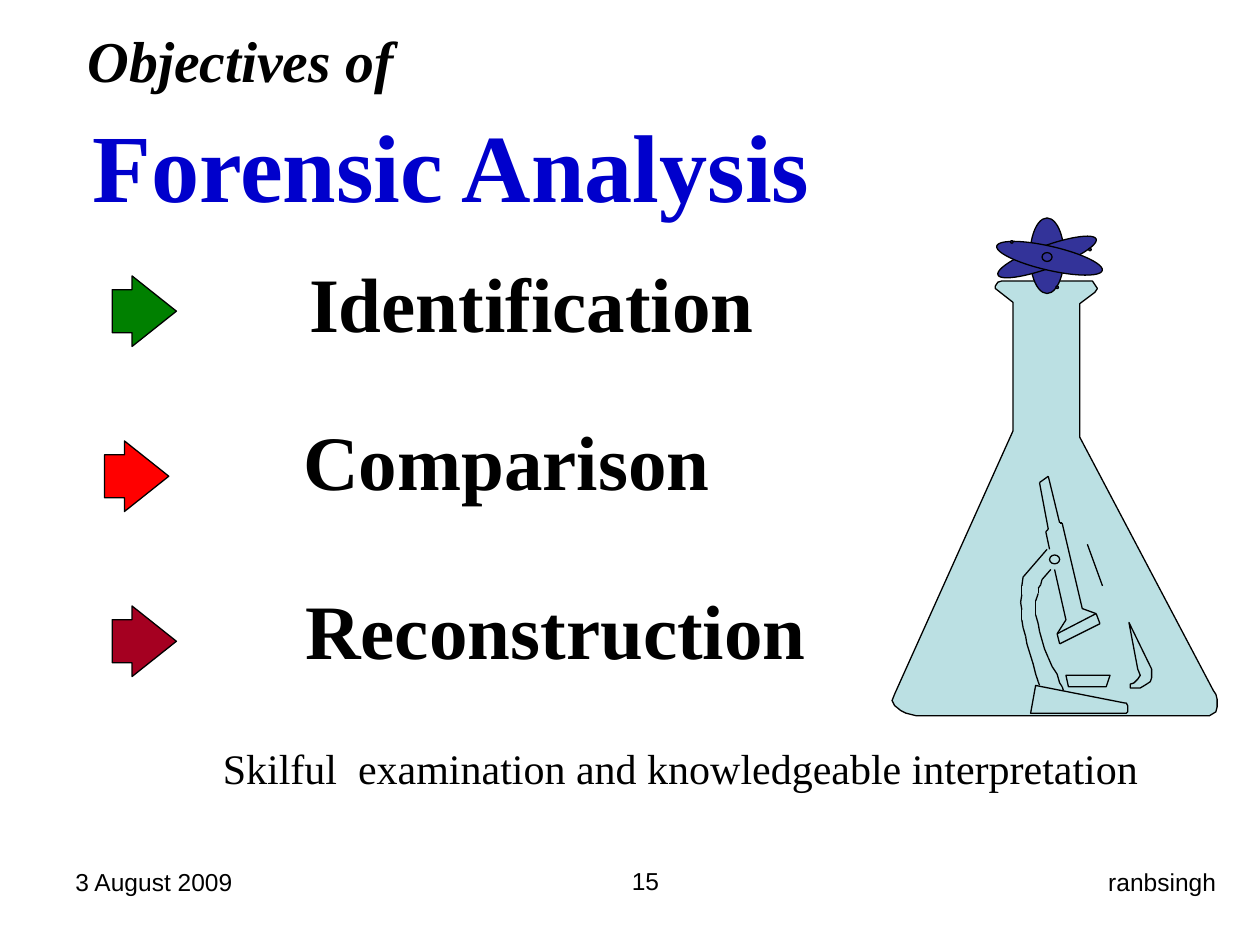
import itertools

import pptx
import pptx.dml.color
import pptx.enum.shapes
import pptx.enum.text
import pptx.oxml
import pptx.util

Inches = pptx.util.Inches
Pt = pptx.util.Pt
SHAPE = pptx.enum.shapes.MSO_SHAPE
ALIGN = pptx.enum.text.PP_ALIGN
LEFT, CENTER, RIGHT = ALIGN.LEFT, ALIGN.CENTER, ALIGN.RIGHT

BLACK, BLUE = "000000", "0000CC"
GLASS, ATOM = "BBE0E3", "333399"
SERIF, SANS = "Times New Roman", "Arial"

FLASK = [
    (8.57, 2.41), (8.57, 3.47), (9.63, 5.48), (9.65, 5.51), (9.66, 5.55),
    (9.66, 5.61), (9.65, 5.65), (9.6, 5.68), (7.27, 5.68), (7.19, 5.66),
    (7.15, 5.64), (7.1, 5.6), (7.08, 5.56), (7.1, 5.51), (8.04, 3.42),
    (8.04, 2.4), (7.9, 2.29), (7.9, 2.27), (7.92, 2.24), (7.95, 2.23),
    (8.67, 2.23), (8.71, 2.29), (8.69, 2.32)]
MIRROR = [
    (8.97, 5.46), (9.05, 5.46), (9.1, 5.43), (9.13, 5.41), (9.14, 5.38),
    (9.14, 5.31), (8.96, 4.94), (9.03, 5.31), (9.05, 5.36), (9.03, 5.39),
    (9, 5.42), (8.97, 5.43)]
BASE = [
    (8.18, 5.66), (8.94, 5.66), (8.95, 5.65), (8.95, 5.6), (8.94, 5.58),
    (8.93, 5.58), (8.22, 5.44)]
STAGE = [(8.46, 5.36), (8.81, 5.36), (8.78, 5.45), (8.48, 5.45)]
OUTER_ARM = [
    (8.31, 4.36), (8.12, 4.58), (8.11, 4.65), (8.11, 4.72), (8.1, 4.78),
    (8.11, 4.84), (8.11, 4.92), (8.12, 4.98), (8.14, 5.05), (8.15, 5.11),
    (8.2, 5.27), (8.22, 5.35), (8.24, 5.41), (8.25, 5.44)]
INNER_ARM = [
    (8.34, 4.52), (8.27, 4.6), (8.26, 4.64), (8.24, 4.67), (8.24, 4.71),
    (8.22, 4.77), (8.22, 4.83), (8.22, 4.88), (8.24, 4.95), (8.25, 5.01),
    (8.27, 5.08), (8.29, 5.15), (8.32, 5.22), (8.35, 5.29), (8.39, 5.35),
    (8.41, 5.42), (8.43, 5.45), (8.44, 5.48)]
EYEPIECE = [
    (8.33, 4.36), (8.3, 4.22), (8.32, 4.2), (8.25, 3.83), (8.32, 3.78),
    (8.41, 4.15), (8.43, 4.15)]
BARREL = [(8.43, 4.15), (8.59, 4.83), (8.7, 4.87)]
OBJECTIVE = [
    (8.7, 4.87), (8.73, 4.95), (8.41, 5.11), (8.39, 5.03), (8.46, 4.92),
    (8.37, 4.52)]


def rgb(color):
    return pptx.dml.color.RGBColor.from_string(color)


def write(tf, text, size=14, font=SANS, color=BLACK, bold=False,
          italic=False, align=LEFT):
    p = tf.paragraphs[0]
    p.alignment = align
    r = p.add_run()
    r.text = text
    r.font.size = Pt(size)
    r.font.name = font
    r.font.color.rgb = rgb(color)
    r.font.bold = bold
    r.font.italic = italic


class Drawing:
    def __init__(self, slide, line_width=0.75):
        self.slide = slide
        self.shapes = slide.shapes
        self.line_width = Pt(line_width)

    def style(self, sp, fill):
        sp.shadow.inherit = False
        if fill:
            sp.fill.solid()
            sp.fill.fore_color.rgb = rgb(fill)
        else:
            sp.fill.background()
        sp.line.color.rgb = rgb(BLACK)
        sp.line.width = self.line_width
        return sp

    def text(self, text, left, top, width, height, wrap=True, **fmt):
        box = self.shapes.add_textbox(
            Inches(left), Inches(top), Inches(width), Inches(height))
        box.text_frame.word_wrap = wrap
        write(box.text_frame, text, **fmt)

    def heading(self, text, center, top, width, height, sp=None, **fmt):
        """Put a centred serif line without insets in sp or a new text box."""
        if sp is None:
            sp = self.shapes.add_textbox(0, 0, 0, 0)
        sp.left, sp.top = Inches(center - width / 2), Inches(top)
        sp.width, sp.height = Inches(width), Inches(height)
        tf = sp.text_frame
        tf.margin_left = tf.margin_right = 0
        tf.margin_top = tf.margin_bottom = 0
        tf.vertical_anchor = pptx.enum.text.MSO_ANCHOR.TOP
        tf.auto_size = pptx.enum.text.MSO_AUTO_SIZE.NONE
        tf.word_wrap = False
        write(tf, text, font=SERIF, bold=True, align=CENTER, **fmt)

    def preset(self, kind, left, top, width, height, fill=None):
        return self.style(self.shapes.add_shape(
            kind, Inches(left), Inches(top), Inches(width), Inches(height)),
            fill)

    def arrow(self, left, top, fill):
        sp = self.preset(SHAPE.RIGHT_ARROW, left, top, 0.51, 0.56, fill)
        sp.adjustments[0] = 0.61
        sp.adjustments[1] = 0.69

    def ellipse(self, x, y, width, height, fill=None, rotation=0):
        """Draw an ellipse around the centre x, y."""
        sp = self.preset(SHAPE.OVAL, x - width / 2, y - height / 2,
                         width, height, fill)
        sp.rotation = rotation

    def outline(self, points, fill=None, close=True):
        start, *rest = [(Inches(x), Inches(y)) for x, y in points]
        builder = self.shapes.build_freeform(*start)
        builder.add_line_segments(rest, close=close)
        self.style(builder.convert_to_shape(), fill)

    def line(self, start, end):
        c = self.shapes.add_connector(
            pptx.enum.shapes.MSO_CONNECTOR.STRAIGHT,
            *[Inches(v) for v in (*start, *end)])
        c.line.color.rgb = rgb(BLACK)
        c.line.width = self.line_width
        c.element.spPr.append(pptx.oxml.parse_xml(
            '<a:effectLst xmlns:a="http://schemas.openxmlformats.org/'
            'drawingml/2006/main"/>'))


def draw_flask(d):
    d.outline(FLASK, GLASS)
    d.outline(MIRROR, GLASS)
    d.line((8.63, 4.32), (8.75, 4.65))


def draw_microscope(d):
    for part in (BASE, STAGE):
        d.outline(part)
    for part in (OUTER_ARM, INNER_ARM, EYEPIECE, OBJECTIVE):
        for start, end in itertools.pairwise(part):
            d.line(start, end)
    d.outline(BARREL, close=False)
    d.line((8.39, 5.03), (8.7, 4.87))
    d.ellipse(8.37, 4.44, 0.08, 0.07)


def draw_atom(d):
    for x, y, width, height, rotation in [
            (8.31, 2.03, 0.27, 0.6, 0),
            (8.31, 2.04, 0.83, 0.18, -20),
            (8.33, 2.05, 0.86, 0.19, 13)]:
        d.ellipse(x, y, width, height, ATOM, rotation)
    d.ellipse(8.31, 2.04, 0.08, 0.07, ATOM)
    for x, y in [(8.65, 1.98), (8.39, 2.28), (8.03, 1.92)]:
        d.ellipse(x, y, 0.02, 0.02, ATOM)


def main():
    prs = pptx.Presentation()
    prs.slide_width, prs.slide_height = Inches(10), Inches(7.5)
    d = Drawing(prs.slides.add_slide(prs.slide_layouts[5]))

    d.heading("Objectives of", 1.91, 0.2, 2.5, 0.55, size=33, italic=True)
    d.heading("Forensic Analysis", 3.58, 0.84, 5.8, 0.9,
              sp=d.shapes.title, size=55, color=BLUE)
    for text, center, top, arrow_left, arrow_top, color in [
            ("Identification", 4.22, 2.03, 0.89, 2.19, "008000"),
            ("Comparison", 4.02, 3.28, 0.83, 3.5, "FF0000"),
            ("Reconstruction", 4.41, 4.62, 0.89, 4.81, "A50021")]:
        d.heading(text, center, top, 4, 0.7, size=44)
        d.arrow(arrow_left, arrow_top, color)

    draw_flask(d)
    draw_microscope(d)
    draw_atom(d)

    d.text("Skilful  examination and knowledgeable interpretation",
           1.67, 5.84, 7.62, 0.51, wrap=False, size=24, font=SERIF)
    d.text("3 August 2009", 0.5, 6.83, 2.33, 0.52)
    d.text("15", 3, 6.82, 2.33, 0.52, align=RIGHT)
    d.text("ranbsingh", 6.58, 6.83, 3.17, 0.52, align=RIGHT)
    prs.save("out.pptx")


if __name__ == "__main__":
    main()
